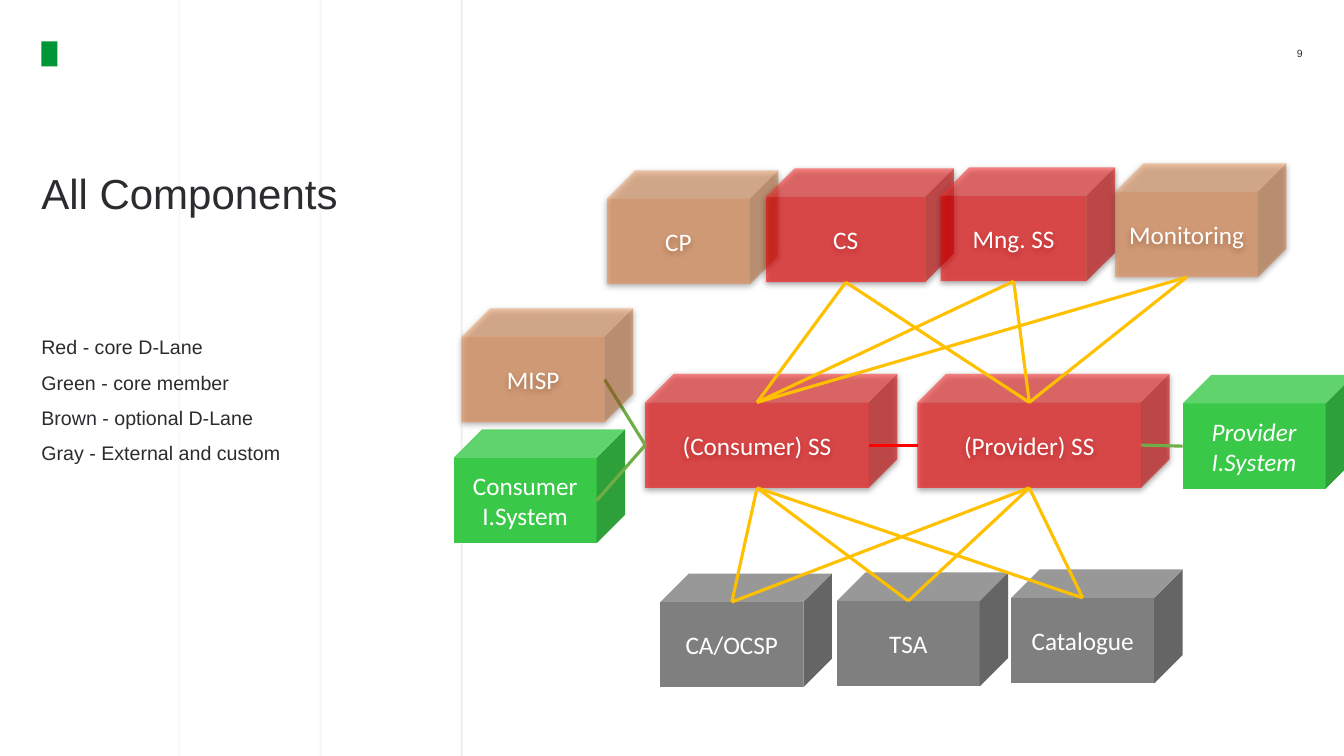
from dataclasses import dataclass
from itertools import product

from lxml import etree
from pptx import Presentation, util as u
from pptx.dml.color import RGBColor
from pptx.enum import shapes as es, text as et
from pptx.oxml import ns

# Grid: ten columns and ten rows to the inch
COLS, ROWS = 133.3, 75
WIDE, HIGH = u.Inches(13.33), u.Inches(7.5)
DEEP = 2.82  # depth of a cube's top and side
TALL = 11.3  # height of a cube

HUES = {
    "ink": "2C2C30", "white": "FFFFFF", "mark": "009638", "rule": "E8E7E3",
    "red": "FF0000", "brown": "ED7D31", "green": "39C848", "gray": "7F7F7F",
    "gold": "FFC000", "leaf": "70AD47", "black": "000000",
}


@dataclass(frozen=True)
class Cube:
    label: str
    left: float
    top: float
    hue: str
    wide: float = 17
    alpha: int = 100
    slant: bool = False

    def spot(self, side: str) -> tuple[float, float]:
        """Middle of one edge of the front face."""
        face, low = self.wide - DEEP, self.top + TALL
        mid = self.top + (TALL + DEEP) / 2
        return {
            "top": (self.left + face / 2, self.top + DEEP),
            "base": (self.left + face / 2, low),
            "left": (self.left, mid),
            "right": (self.left + face, mid),
        }[side]


@dataclass(frozen=True)
class Link:
    start: tuple[float, float]
    end: tuple[float, float]
    hue: str
    width: float = 2.25
    alpha: int = 100


@dataclass(frozen=True)
class Note:
    lines: tuple[str, ...]
    box: tuple[float, float, float, float]
    size: float
    align: et.PP_ALIGN = et.PP_ALIGN.LEFT
    anchor: et.MSO_ANCHOR = et.MSO_ANCHOR.TOP
    space: float = 1
    before: float = 0


def col(n: float) -> int:
    return round(WIDE * n / COLS)


def row(n: float) -> int:
    return round(HIGH * n / ROWS)


def tint(name: str) -> RGBColor:
    return RGBColor.from_string(HUES[name])


def fade(fill, alpha: int) -> None:
    """Set the opacity of a solid fill, in percent."""
    if alpha < 100:
        tone = fill._xPr.find(".//" + ns.qn("a:srgbClr"))
        etree.SubElement(tone, ns.qn("a:alpha"), val=str(alpha * 1000))


def shade(shape) -> None:
    """Cast a soft shadow straight down."""
    list_ = shape._element.spPr.find(ns.qn("a:effectLst"))
    cast = etree.SubElement(
        list_, ns.qn("a:outerShdw"), blurRad=str(u.Pt(4.5)),
        dist=str(u.Pt(1.5)), dir="5400000", algn="ctr", rotWithShape="0")
    tone = etree.SubElement(cast, ns.qn("a:srgbClr"), val=HUES["black"])
    etree.SubElement(tone, ns.qn("a:alpha"), val="62000")


def style(para, font: str, size: float, hue: str, slant: bool = False) -> None:
    for run in para.runs:
        run.font.name, run.font.size = font, u.Pt(size)
        run.font.color.rgb = tint(hue)
        run.font.italic = slant


def draw_cube(slide, cube: Cube) -> None:
    shape = slide.shapes.add_shape(
        es.MSO_SHAPE.CUBE, col(cube.left), row(cube.top),
        col(cube.wide), row(TALL))
    shape.adjustments[0] = 0.25
    shape.shadow.inherit = False
    shape.fill.solid()
    shape.fill.fore_color.rgb = tint(cube.hue)
    fade(shape.fill, cube.alpha)
    shape.line.fill.background()
    if cube.alpha < 100:
        shade(shape)
    frame = shape.text_frame
    frame.word_wrap = True
    frame.vertical_anchor = et.MSO_ANCHOR.MIDDLE
    frame.text = cube.label
    para = frame.paragraphs[0]
    para.alignment = et.PP_ALIGN.CENTER
    style(para, "Calibri", 18, "white", cube.slant)


def draw_link(slide, link: Link) -> None:
    (x1, y1), (x2, y2) = link.start, link.end
    line = slide.shapes.add_connector(
        es.MSO_CONNECTOR.STRAIGHT, col(x1), row(y1), col(x2), row(y2))
    line.line.width = u.Pt(link.width)
    line.line.color.rgb = tint(link.hue)
    fade(line.line.fill, link.alpha)
    etree.SubElement(line._element.spPr, ns.qn("a:effectLst"))


def draw_note(slide, note: Note) -> None:
    x, y, w, h = note.box
    frame = slide.shapes.add_textbox(col(x), row(y), col(w), row(h)).text_frame
    frame.word_wrap = True
    frame.vertical_anchor = note.anchor
    frame.margin_left = frame.margin_right = 0
    frame.margin_top = frame.margin_bottom = 0
    frame.text = "\n".join(note.lines)
    for para in frame.paragraphs:
        para.alignment = note.align
        para.line_spacing = note.space
        para.space_before = u.Pt(note.before)
        style(para, "Arial", note.size, "ink")


# Cubes
cp = Cube("CP", 60.2, 16.9, "brown", alpha=48)
cs = Cube("CS", 76, 16.7, "red", 18.6, 57)
server = Cube("(Provider) SS", 91, 37.1, "red", 25, 57)
client = Cube("(Consumer) SS", 64, 37.1, "red", 25, 57)
mng = Cube("Mng. SS", 93.3, 16.6, "red", 17.3, 57)
watch = Cube("Monitoring", 110.6, 16.2, "brown", alpha=48)
misp = Cube("MISP", 45.8, 30.6, "brown", alpha=48)
ca = Cube("CA/OCSP", 65.5, 56.9, "gray")
tsa = Cube("TSA", 83, 56.8, "gray")
store = Cube("Catalogue", 100.3, 56.5, "gray")
user = Cube("Consumer I.System", 45, 42.6, "green")
source = Cube("Provider I.System", 117.3, 37.2, "green", slant=True)

CUBES = [cp, cs, server, client, mng, watch, ca, tsa, store, user, source]
HUBS = (client, server)

# Links
LINKS = [
    Link(server.spot("left"), client.spot("right"), "red"),
    Link(server.spot("right"), source.spot("left"), "leaf"),
    *(Link(c.spot("right"), client.spot("left"), "leaf") for c in (user, misp)),
    *(Link(hub.spot("top"), c.spot("base"), "gold")
      for hub, c in product(HUBS, (cs, mng, watch))),
    *(Link(hub.spot("base"), c.spot("top"), "gold")
      for hub, c in product(HUBS, (ca, tsa, store))),
]
RULES = [Link((17.8 + 14 * i, 0), (17.8 + 14 * i, ROWS), "rule", 1.5, 20 * (i + 1))
         for i in range(3)]

# Text
NOTES = [
    Note(("Red - core D-Lane", "Green - core member",
          "Brown - optional D-Lane", "Gray - External and custom"),
         (4.1, 32.8, 38.9, 35.4), 14, space=1.2, before=5),
    Note(("All Components",), (4.1, 16.6, 38.9, 14.4), 30),
    Note(("9",), (125.3, 4.1, 3.9, 2.4), 7.5,
         et.PP_ALIGN.RIGHT, et.MSO_ANCHOR.MIDDLE),
]


def main() -> None:
    deck = Presentation()
    deck.slide_width, deck.slide_height = WIDE, HIGH
    slide = deck.slides.add_slide(deck.slide_layouts[6])

    # Plain mark in the corner
    mark = slide.shapes.add_shape(
        es.MSO_SHAPE.RECTANGLE, col(4.1), row(4.1), col(1.6), row(2.5))
    mark.shadow.inherit = False
    mark.fill.solid()
    mark.fill.fore_color.rgb = tint("mark")
    mark.line.fill.background()

    for rule in RULES:
        draw_link(slide, rule)
    for note in NOTES:
        draw_note(slide, note)
    for cube in CUBES:
        draw_cube(slide, cube)
    for link in LINKS:
        draw_link(slide, link)
    draw_cube(slide, misp)  # its link shows through

    deck.save("out.pptx")


if __name__ == "__main__":
    main()
